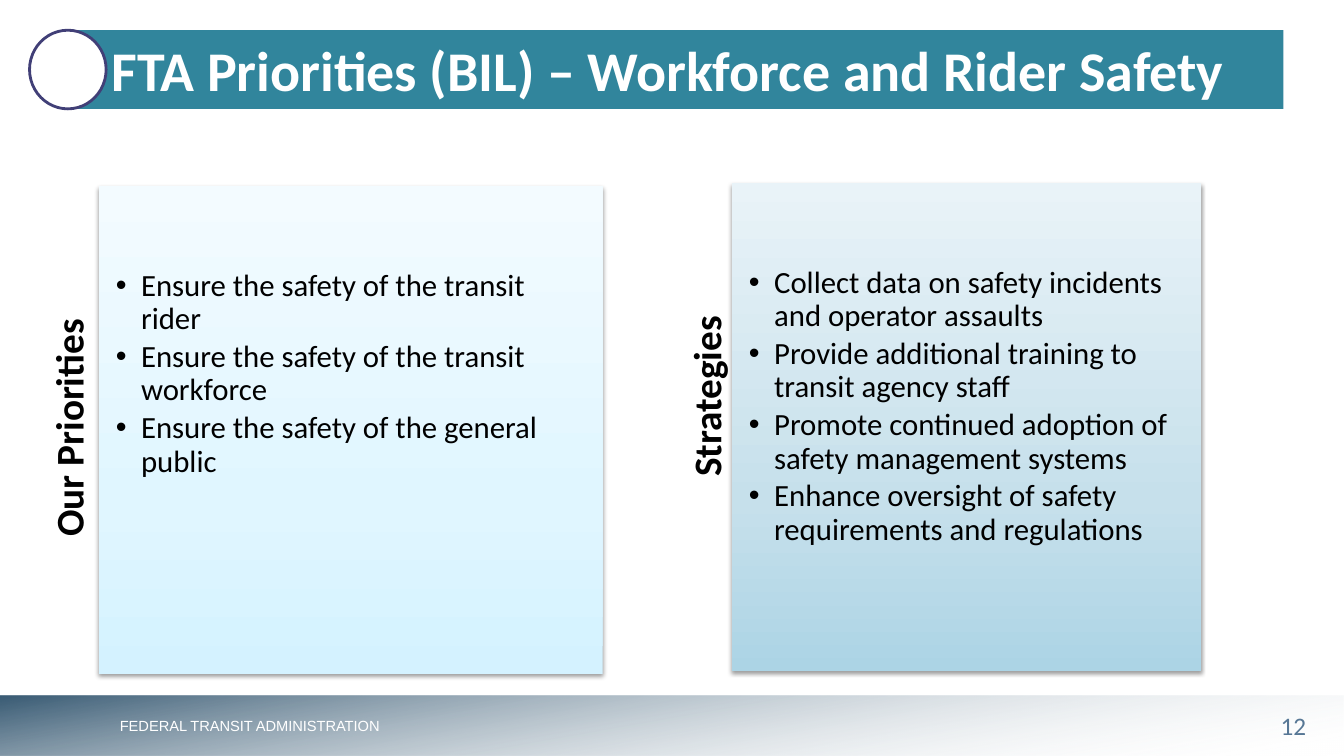
from lxml import etree
from pptx import Presentation
from pptx.dml.color import RGBColor
from pptx.enum.shapes import MSO_SHAPE
from pptx.enum.text import MSO_ANCHOR, PP_ALIGN
from pptx.oxml import parse_xml
from pptx.util import Inches, Pt

RECT, OVAL = MSO_SHAPE.RECTANGLE, MSO_SHAPE.OVAL
TOP, MID = MSO_ANCHOR.TOP, MSO_ANCHOR.MIDDLE
LEFT, CENTER, RIGHT = PP_ALIGN.LEFT, PP_ALIGN.CENTER, PP_ALIGN.RIGHT
WHITE = RGBColor(0xFF, 0xFF, 0xFF)
BLACK = RGBColor(0, 0, 0)
TEAL = RGBColor(0x31, 0x85, 0x9C)
PURPLE = RGBColor(0x41, 0x3F, 0x77)
SLATE = RGBColor(0x57, 0x77, 0x95)
NAVY = RGBColor(0x39, 0x5B, 0x74)
ICE = [RGBColor(0xD4, 0xF2, 0xFF), RGBColor(0xE0, 0xF6, 0xFF), RGBColor(0xF3, 0xFB, 0xFF)]
MIST = [RGBColor(0xAC, 0xD4, 0xE5), RGBColor(0xC6, 0xE0, 0xEB), RGBColor(0xE9, 0xF3, 0xF8)]
NS = 'xmlns:a="http://schemas.openxmlformats.org/drawingml/2006/main"'

deck = Presentation()
deck.slide_width, deck.slide_height = Inches(13.333), Inches(7.5)
COL, ROW = deck.slide_width / 100, deck.slide_height / 100  # one percent each way
slide = deck.slides.add_slide(deck.slide_layouts[6])
shapes = slide.shapes


def write(shape, *lines, size, color=BLACK, font="Calibri", bold=False, align=LEFT,
          anchor=TOP, inset=(0.1, 0.05, 0.1, 0.05), wrap=True, pitch=None, after=0,
          bullet=False):
    frame = shape.text_frame
    frame.word_wrap, frame.vertical_anchor = wrap, anchor
    (frame.margin_left, frame.margin_top,
     frame.margin_right, frame.margin_bottom) = map(Inches, inset)
    for i, line in enumerate(lines):
        para = frame.add_paragraph() if i else frame.paragraphs[0]
        para.text, para.alignment = line, align
        para.line_spacing, para.space_after = pitch, Pt(after)
        if bullet:
            props = para._p.get_or_add_pPr()
            props.set("marL", str(Inches(0.25)))
            props.set("indent", str(-Inches(0.25)))
            props.append(parse_xml(f'<a:buFont {NS} typeface="Arial"/>'))
            props.append(parse_xml(f'<a:buChar {NS} char="•"/>'))
        style = para.font
        style.name, style.size, style.bold = font, Pt(size), bold
        style.color.rgb = color


def block(kind, box, stops, turn=0, line=None):
    """Add a shape; stops are (percent, colour, alpha percent), one stop meaning solid."""
    x, y, w, h = box
    shape = shapes.add_shape(kind, int(x * COL), int(y * ROW), int(w * COL), int(h * ROW))
    shape.shadow.inherit = False
    if len(stops) == 1:
        shape.fill.solid()
        shape.fill.fore_color.rgb = stops[0][1]
    else:
        shape.fill.gradient()
        grad = shape.fill._fill._gradFill
        for part in list(grad):
            grad.remove(part)
        marks = "".join(
            f'<a:gs pos="{pos * 1000}"><a:srgbClr val="{color}">'
            f'<a:alpha val="{alpha * 1000}"/></a:srgbClr></a:gs>'
            for pos, color, alpha in stops)
        grad.append(parse_xml(f'<a:gsLst {NS}>{marks}</a:gsLst>'))
        grad.append(parse_xml(f'<a:lin {NS} ang="{turn * 60000}" scaled="0"/>'))
    if line:
        shape.line.color.rgb, shape.line.width = line, Pt(2)
    else:
        shape.line.fill.background()
    return shape


# Footer
block(RECT, (0, 92, 100, 8), [(0, NAVY, 100), (99, WHITE, 0)], turn=80)
page = shapes.add_textbox(int(92.45 * COL), int(93.45 * ROW), int(7.55 * COL), int(5 * ROW))
write(page, "12", size=18, color=SLATE, align=CENTER, inset=(0.07, 0.04, 0.07, 0.04))
owner = shapes.add_textbox(int(8.18 * COL), int(94.13 * ROW), int(21.4 * COL), int(3.7 * ROW))
write(owner, "FEDERAL TRANSIT ADMINISTRATION", size=10.5, color=WHITE, font="Arial", wrap=False)

# Title bar
title = block(RECT, (5, 4, 90.5, 10.4), [(0, TEAL, 100)])
write(title, "FTA Priorities (BIL) – Workforce and Rider Safety", size=40, color=WHITE,
      bold=True, anchor=MID, inset=(0.44, 0.05, 0.1, 0.05))
block(OVAL, (2.2, 4, 5.7, 10.4), [(0, WHITE, 100)], line=PURPLE)

# Panels: label, label edge, label depth, panel left, top, width, colours, points
panels = [
    ("Strategies", 51.15, 18.53, 54.45, 24.25, 34.9, MIST, [
        "Collect data on safety incidents and operator assaults",
        "Provide additional training to transit agency staff",
        "Promote continued adoption of safety management systems",
        "Enhance oversight of safety requirements and regulations"]),
    ("Our Priorities", 3.71, 12.53, 7.35, 24.65, 37.5, ICE, [
        "Ensure the safety of the transit rider",
        "Ensure the safety of the transit workforce",
        "Ensure the safety of the general public"]),
]
TALL, LONG = 64.55, 33.15
for name, edge, depth, x, y, w, tints, points in panels:
    long, deep = LONG * COL, depth * ROW
    mid_x, mid_y = edge * COL + deep / 2, (y + TALL / 2 + 3.7) * ROW
    label = shapes.add_textbox(int(mid_x - long / 2), int(mid_y - deep / 2), int(long), int(deep))
    label.rotation = 270
    write(label, name, size=28, bold=True, align=RIGHT, inset=(0, 0, 0.83, 0), pitch=0.9)

    panel = block(RECT, (x, y, w, TALL),
                  [(pos, tint, 100) for pos, tint in zip((0, 35, 100), tints)], turn=270)
    glow = panel._element.spPr.find("{*}effectLst")
    shade = etree.SubElement(glow, glow.tag.replace("effectLst", "outerShdw"),
                             blurRad=str(Pt(3.1)), dist=str(Pt(1.6)), dir="5400000",
                             rotWithShape="0")
    shade.append(parse_xml(f'<a:srgbClr {NS} val="{BLACK}"><a:alpha val="38000"/></a:srgbClr>'))
    write(panel, *points, size=22, inset=(0.17, 0.83, 0.17, 0.17), pitch=0.9, after=3.3,
          bullet=True)

deck.save("out.pptx")
